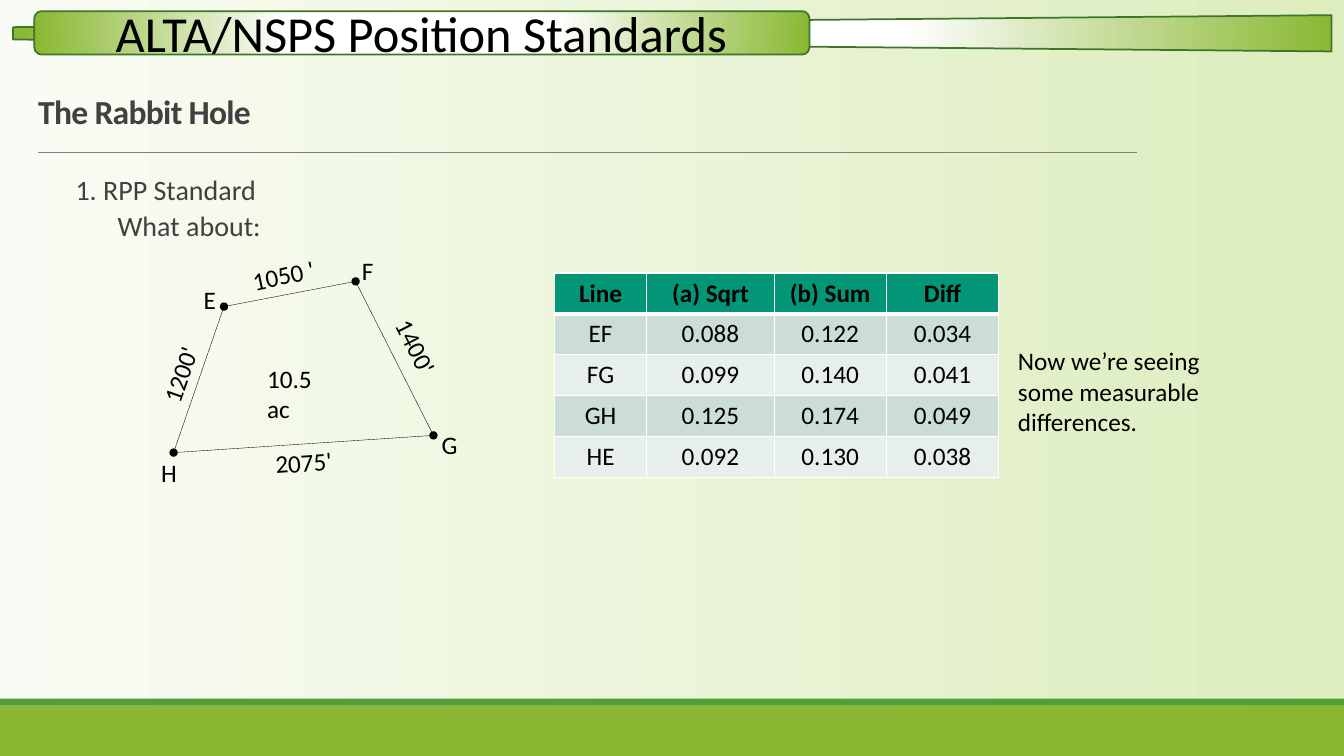
import dataclasses

import pptx
import pptx.dml.color
import pptx.enum.shapes
import pptx.enum.text
import pptx.oxml
import pptx.oxml.ns
import pptx.util

Pt = pptx.util.Pt
qn = pptx.oxml.ns.qn
NS = pptx.oxml.ns.nsdecls("a")
Shape = pptx.enum.shapes.MSO_SHAPE
Align = pptx.enum.text.PP_ALIGN
Anchor = pptx.enum.text.MSO_ANCHOR
Fit = pptx.enum.text.MSO_AUTO_SIZE


@dataclasses.dataclass(frozen=True)
class Theme:
    font: str = "Calibri"
    ink: str = "000000"
    soft: str = "404040"
    rule: str = "808080"
    white: str = "FFFFFF"
    lime: str = "8AB833"
    green: str = "549E39"
    edge: str = "3E752A"
    pale: str = "F9FCF4"
    tint: str = "DDEDBE"
    head: str = "029676"
    odd: str = "CCDDD6"
    even: str = "E7EFEC"
    banner: int = 36
    title: int = 24
    body: int = 20
    note: int = 18


T = Theme()
ROWS = [
    ("Line", "(a) Sqrt", "(b) Sum", "Diff"),
    ("EF", "0.088", "0.122", "0.034"),
    ("FG", "0.099", "0.140", "0.041"),
    ("GH", "0.125", "0.174", "0.049"),
    ("HE", "0.092", "0.130", "0.038"),
]
POINTS = {"E": (160, 219), "F": (254, 201), "G": (309.6, 311), "H": (124, 323.3)}
SIDES = [("H", "E", False), ("E", "F", True), ("F", "G", False), ("G", "H", True)]
# text, left, top, width, height, rotation
LABELS = [
    ("1050 '", 180, 185, 49.7, 21.6, 348),
    ("1400'", 275.8, 239, 45.4, 21.6, 63),
    ("2075'", 196.6, 319, 44.6, 21.6, 356),
    ("1200'", 106.6, 254.2, 45.4, 21.6, 289),
    ("E", 145.4, 203, 8, 18, 0),
    ("F", 258.5, 182.2, 7.2, 18, 0),
    ("G", 315.4, 306.7, 9.4, 18, 0),
    ("H", 115.2, 326.9, 9.4, 18, 0),
]


def rgb(code):
    return pptx.dml.color.RGBColor.from_string(code)


def style(para, size, color=T.ink, bold=False, align=Align.LEFT):
    font = para.font
    font.name, font.size, font.bold = T.font, Pt(size), bold
    font.color.rgb = rgb(color)
    para.alignment = align


def space(para, line, before=0, after=0):
    para.line_spacing = line
    para.space_before, para.space_after = Pt(before), Pt(after)


def add_shape(slide, kind, *box):
    shape = slide.shapes.add_shape(kind, *map(Pt, box))
    shape.shadow.inherit = False
    return shape


def add_band(slide, color, *box):
    band = add_shape(slide, Shape.RECTANGLE, *box)
    band.fill.solid()
    band.fill.fore_color.rgb = rgb(color)
    band.line.fill.background()


def add_glow(slide, kind, *box):
    """Add an outlined shape with a radial white-to-lime fill."""
    shape = add_shape(slide, kind, *box)
    shape.line.color.rgb = rgb(T.edge)
    shape.line.width = Pt(1.25)
    shape.fill.gradient()
    props = shape.fill._xPr
    stops = "".join(
        f'<a:gs pos="{pos}"><a:srgbClr val="{color}"/></a:gs>'
        for pos, color in ((0, T.white), (35000, T.white), (100000, T.lime))
    )
    glow = pptx.oxml.parse_xml(
        f'<a:gradFill {NS} rotWithShape="1"><a:gsLst>{stops}</a:gsLst>'
        '<a:path path="circle"><a:fillToRect l="50000" t="-80000" '
        'r="50000" b="180000"/></a:path></a:gradFill>'
    )
    props.replace(props.find(qn("a:gradFill")), glow)
    return shape


def add_line(slide, start, end, color, width, dots=False):
    line = slide.shapes.add_connector(
        pptx.enum.shapes.MSO_CONNECTOR.STRAIGHT, *map(Pt, (*start, *end))
    )
    line.line.color.rgb = rgb(color)
    line.line.width = Pt(width)
    if dots:
        for tag in ("headEnd", "tailEnd"):
            line.line._ln.append(pptx.oxml.parse_xml(f'<a:{tag} {NS} type="oval"/>'))
    line._element.spPr.append(pptx.oxml.parse_xml(f"<a:effectLst {NS}/>"))


def add_text(slide, text, box, size, color=T.ink, bold=False,
             align=Align.LEFT, inset=None, wrap=True):
    """Add a text box and return it; each line of text is a paragraph."""
    item = slide.shapes.add_textbox(*map(Pt, box))
    frame = item.text_frame
    frame.word_wrap = wrap
    frame.auto_size = Fit.SHAPE_TO_FIT_TEXT
    if inset is not None:
        frame.margin_left = frame.margin_right = Pt(inset[0])
        frame.margin_top = frame.margin_bottom = Pt(inset[1])
    frame.text = text
    for para in frame.paragraphs:
        style(para, size, color, bold, align)
    return item


def add_edges(cell, base):
    """Draw white cell borders, with the given width at the bottom."""
    props = cell._tc.get_or_add_tcPr()
    for i, side in enumerate("LRTB"):
        width = Pt(base if side == "B" else 1)
        props.insert(i, pptx.oxml.parse_xml(
            f'<a:ln{side} {NS} w="{width}"><a:solidFill>'
            f'<a:srgbClr val="{T.white}"/></a:solidFill></a:ln{side}>'
        ))


def add_table(slide):
    table = slide.shapes.add_table(
        len(ROWS), len(ROWS[0]), *map(Pt, (396, 195, 317.5, 146))
    ).table
    for col, width in zip(table.columns, (66, 91, 80, 80.5)):
        col.width = Pt(width)
    for r, row in enumerate(ROWS):
        table.rows[r].height = Pt(29.2)
        for c, text in enumerate(row):
            cell = table.cell(r, c)
            cell.text = text
            style(cell.text_frame.paragraphs[0], T.note, bold=r == 0, align=Align.CENTER)
            cell.fill.solid()
            cell.fill.fore_color.rgb = rgb(T.head if r == 0 else T.odd if r % 2 else T.even)
            add_edges(cell, 3 if r == 0 else 1)


def add_frame(slide):
    fill = slide.background.fill
    fill.gradient()
    fill.gradient_angle = 0
    for stop, pos, color in zip(fill.gradient_stops, (0, 1), (T.pale, T.tint)):
        stop.position = pos
        stop.color.rgb = rgb(color)
    wedge = add_glow(slide, Shape.TRAPEZOID, 467.3, -447.1, 25.9, 941.8)
    wedge.adjustments[0] = 0.33
    wedge.rotation = 270
    add_band(slide, T.lime, 0, 504, 960, 36)
    add_band(slide, T.green, 0, 499, 960, 5)
    add_line(slide, (27.4, 108.7), (812.2, 108.7), T.rule, 0.5)
    add_glow(slide, Shape.ROUNDED_RECTANGLE, 24.5, 8, 553.7, 31)
    add_text(slide, "ALTA/NSPS Position Standards", (29.5, -2.2, 543, 51),
             T.banner, align=Align.CENTER)


def add_heads(slide):
    title = add_text(slide, "The Rabbit Hole", (20.2, 56.2, 792, 41),
                     T.title, T.soft, bold=True).text_frame
    title.auto_size = Fit.NONE
    title.vertical_anchor = Anchor.BOTTOM
    space(title.paragraphs[0], 0.85)
    title.paragraphs[0].runs[0].font._element.set("spc", "-50")
    body = add_text(slide, "1. RPP Standard\nWhat about:", (54, 122.4, 849.6, 342),
                    T.body, T.soft, inset=(0, 3.6)).text_frame
    body.auto_size = Fit.NONE
    first, second = body.paragraphs
    space(first, 0.9, 12, 2)
    space(second, 0.9, 2, 4)
    second.level = 1
    second._p.get_or_add_pPr().set("marL", str(Pt(30)))


def add_plot(slide):
    """Draw the four-sided parcel with its corners, lengths and area."""
    for start, end, dots in SIDES:
        add_line(slide, POINTS[start], POINTS[end], T.ink, 0.25, dots)
    add_text(slide, "10.5 ac", (190.8, 259.2, 47.5, 18), T.note, inset=(0, 0))
    for text, *box, turn in LABELS:
        label = add_text(slide, text, box, T.note, inset=(0, 0), wrap=False)
        label.rotation = turn


def main():
    deck = pptx.Presentation()
    deck.slide_width, deck.slide_height = Pt(960), Pt(540)
    slide = deck.slides.add_slide(deck.slide_layouts[6])
    add_frame(slide)
    add_heads(slide)
    add_table(slide)
    add_plot(slide)
    add_text(slide, "Now we’re seeing some measurable differences.",
             (720, 243.4, 166.3, 72.7), T.note)
    deck.save("out.pptx")


if __name__ == "__main__":
    main()
